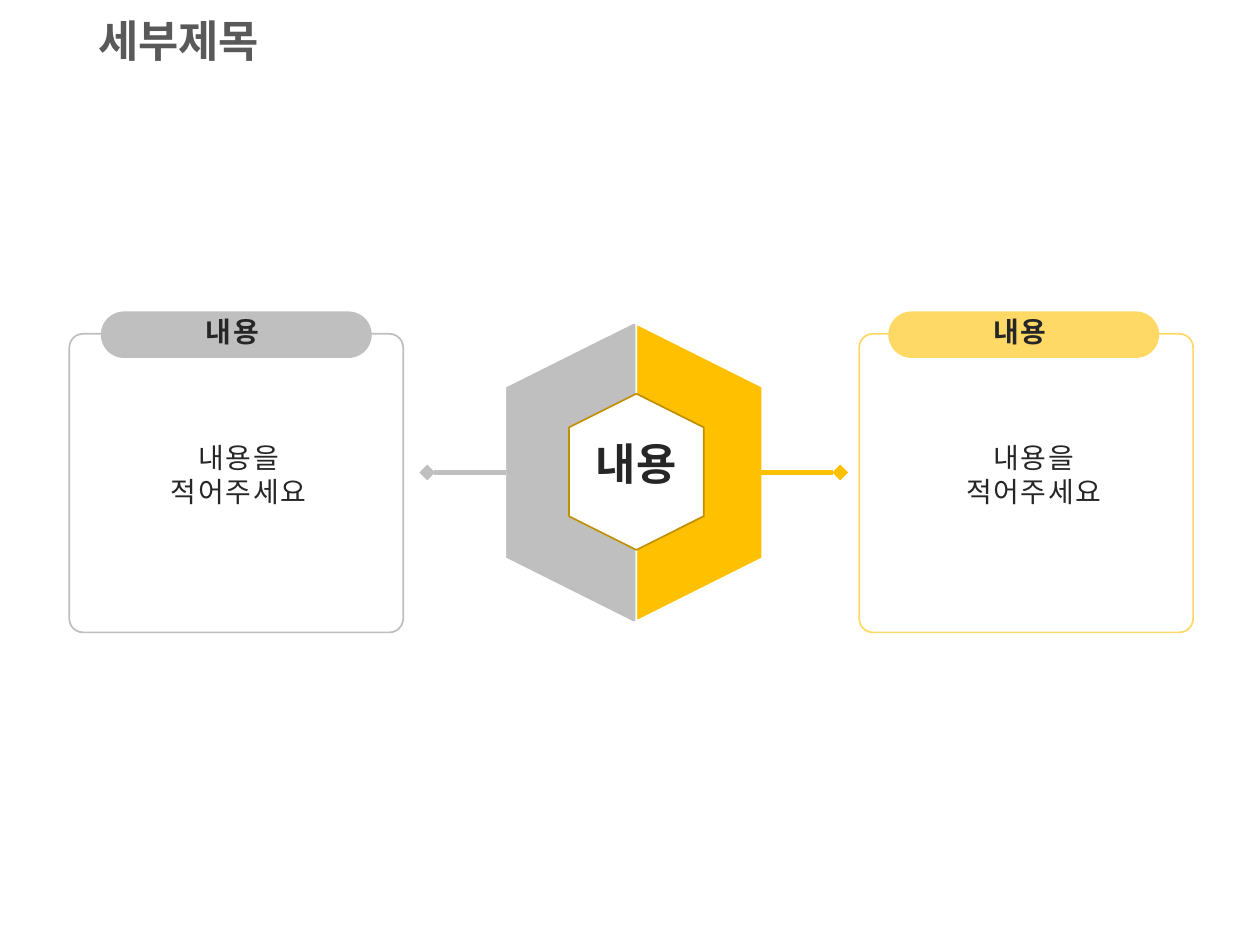
"""Build a slide that compares two cards around a split hexagon."""
from dataclasses import dataclass

from lxml.etree import SubElement
from pptx import Presentation
from pptx.dml.color import RGBColor
from pptx.enum.shapes import MSO_CONNECTOR, MSO_SHAPE
from pptx.enum.text import MSO_ANCHOR, MSO_AUTO_SIZE, PP_ALIGN
from pptx.oxml.ns import qn
from pptx.util import Pt


@dataclass(frozen=True)
class Theme:
    gold: str = "FFC000"
    pale: str = "FFD966"
    dark: str = "BF9000"
    gray: str = "BFBFBF"
    white: str = "FFFFFF"
    ink: str = "262626"
    head: str = "595959"
    font: str = "Arial"
    title: str = "Calibri"
    big: float = 25
    small: float = 16


@dataclass(frozen=True)
class Box:
    x: float
    y: float
    w: float
    h: float

    def emu(self) -> tuple:
        return Pt(self.x), Pt(self.y), Pt(self.w), Pt(self.h)


@dataclass(frozen=True)
class Side:
    card: float
    pill: float
    body: float
    tint: str
    fill: str
    start: float
    end: float
    half: tuple


THEME = Theme()
MID, TOP, LOW = 363.6, 185, 355
SIDES = (
    Side(491, 507.6, 535, THEME.pale, THEME.gold, 434.9, 480.2,
         ((MID, TOP), (435.6, 221), (435.6, 319), (MID, LOW))),
    Side(39.6, 57.6, 80.6, THEME.gray, THEME.gray, 289.4, 244.1,
         ((362.2, 184.3), (MID, TOP), (MID, LOW), (362.2, 355.7),
          (288.7, 319), (288.7, 221))),
)


def paint(shape, fill: str, line: str = "") -> None:
    """Set flat fill and a thin outline, or none."""
    shape.shadow.inherit = False
    shape.fill.solid()
    shape.fill.fore_color.rgb = RGBColor.from_string(fill)
    if line:
        shape.line.color.rgb = RGBColor.from_string(line)
        shape.line.width = Pt(1)
    else:
        shape.line.fill.background()


def add_half(shapes, side: Side) -> None:
    """Draw one half of the large hexagon."""
    first, *rest = [(Pt(x), Pt(y)) for x, y in side.half]
    build = shapes.build_freeform(*first, scale=1.0)
    build.add_line_segments(rest, close=True)
    paint(build.convert_to_shape(), side.fill, THEME.white)


def add_round(shapes, box: Box, adj: float, fill: str, line: str = "") -> None:
    """Draw a rounded rectangle."""
    shape = shapes.add_shape(MSO_SHAPE.ROUNDED_RECTANGLE, *box.emu())
    shape.adjustments[0] = adj
    paint(shape, fill, line)


def add_arm(shapes, side: Side) -> None:
    """Draw the diamond-tipped line from hexagon to card."""
    arm = shapes.add_connector(MSO_CONNECTOR.STRAIGHT, Pt(side.start), Pt(270),
                               Pt(side.end), Pt(270))
    arm.line.color.rgb = RGBColor.from_string(side.fill)
    arm.line.width = Pt(3)
    SubElement(arm.line._get_or_add_ln(), qn("a:tailEnd"), type="diamond")
    SubElement(arm._element.spPr, qn("a:effectLst"))


def add_text(shapes, box: Box, text: str, size: float, bold: bool = True,
             space=None) -> None:
    """Write centred, slightly spaced text."""
    frame = shapes.add_textbox(*box.emu()).text_frame
    frame.word_wrap = True
    frame.auto_size = MSO_AUTO_SIZE.SHAPE_TO_FIT_TEXT
    frame.text = text
    for para in frame.paragraphs:
        para.alignment = PP_ALIGN.CENTER
        para.line_spacing = space
        style(para, THEME.font, size, THEME.ink, bold)
        para._p.pPr.find(qn("a:defRPr")).set("spc", "100")


def style(para, name: str, size: float, color: str, bold: bool) -> None:
    """Set the font of a paragraph."""
    font = para.font
    font.name, font.size, font.bold = name, Pt(size), bold
    font.color.rgb = RGBColor.from_string(color)


def add_title(shapes, text: str) -> None:
    """Write the slide heading."""
    frame = shapes.add_textbox(*Box(49, 4.3, 620.6, 41).emu()).text_frame
    frame.word_wrap = True
    frame.vertical_anchor = MSO_ANCHOR.MIDDLE
    frame.text = text
    para = frame.paragraphs[0]
    para.line_spacing = 0.9
    style(para, THEME.title, THEME.big, THEME.head, True)


def add_core(shapes) -> None:
    """Draw the upright inner hexagon."""
    core = shapes.add_shape(MSO_SHAPE.HEXAGON, *Box(319, 231.1, 89.3, 77).emu())
    core.rotation = 270
    paint(core, THEME.white, THEME.dark)


def add_card(shapes, side: Side) -> None:
    """Draw a card with its arm, body, pill and label."""
    add_round(shapes, Box(side.card, 190.8, 190.8, 170.6), 0.046,
              THEME.white, side.tint)
    add_arm(shapes, side)
    add_text(shapes, Box(side.body, 248.4, 111.6, 46), "내용을\n적어주세요",
             THEME.small, False)
    add_round(shapes, Box(side.pill, 178, 154.8, 26.6), 0.5, side.tint)
    add_text(shapes, Box(side.pill + 19.4, 176.4, 111.6, 26.6), "내용",
             THEME.small)


def main() -> None:
    """Build and save the slide."""
    deck = Presentation()
    deck.slide_width, deck.slide_height = Pt(720), Pt(540)
    shapes = deck.slides.add_slide(deck.slide_layouts[6]).shapes
    for side in SIDES:
        add_half(shapes, side)
    add_title(shapes, "세부제목")
    add_core(shapes)
    for side in SIDES:
        add_card(shapes, side)
    add_text(shapes, Box(325.4, 257.8, 76.3, 26.6), "내용", THEME.big,
             space=Pt(18))
    deck.save("out.pptx")


if __name__ == "__main__":
    main()
